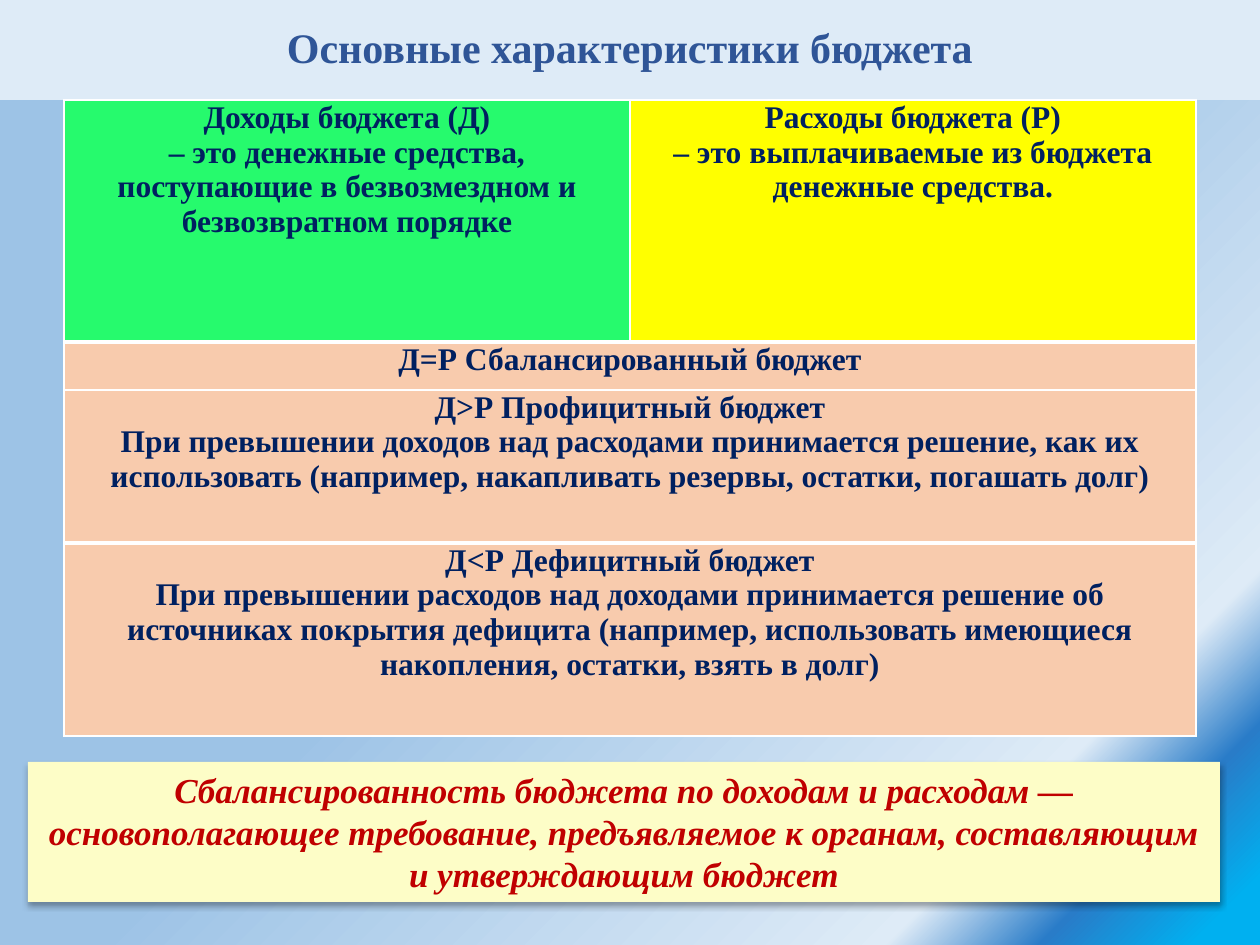
from pptx import Presentation
from pptx.dml.color import RGBColor
from pptx.enum.shapes import MSO_SHAPE
from pptx.enum.text import MSO_ANCHOR, MSO_AUTO_SIZE, PP_ALIGN
from pptx.oxml import parse_xml
from pptx.oxml.ns import nsdecls, qn
from pptx.util import Inches, Pt

TITLE = "Основные характеристики бюджета"
INCOME = ["Доходы бюджета (Д)",
          "– это денежные средства, поступающие в безвозмездном и безвозвратном порядке"]
EXPENSES = ["Расходы бюджета (Р)",
            "– это выплачиваемые из бюджета денежные средства."]
BALANCED = ["Д=Р Сбалансированный бюджет"]
SURPLUS = ["Д>Р Профицитный бюджет",
           "При превышении доходов над расходами принимается решение, как их использовать "
           "(например, накапливать резервы, остатки, погашать долг)"]
DEFICIT = ["Д<Р Дефицитный бюджет",
           "При превышении расходов над доходами принимается решение об источниках покрытия "
           "дефицита (например, использовать имеющиеся накопления, остатки, взять в долг)"]
CONCLUSION = ["Сбалансированность бюджета по доходам и расходам —",
              "основополагающее требование, предъявляемое к органам, составляющим "
              "и утверждающим бюджет"]

PEACH = "F8CBAD"
ROWS = [
    {"height": 242, "cells": [(INCOME, "26FA6D"), (EXPENSES, "FFFF00")], "top": 1, "bottom": 3},
    {"height": 48, "cells": [(BALANCED, PEACH)], "top": 3, "bottom": 1},
    {"height": 153, "cells": [(SURPLUS, PEACH)], "top": 1, "bottom": 3},
    {"height": 193, "cells": [(DEFICIT, PEACH)], "top": 3, "bottom": 1},
]
BACKGROUND = [(3, "00B0F0"), (10, "297CC8"), (17, "DEEBF7"), (53, "9DC3E6"), (96, "9DC3E6")]


def px(length):
    return int(length * Inches(1) / 126)


def color(value):
    return RGBColor.from_string(value)


def paint(shape, value):
    shape.fill.solid()
    shape.fill.fore_color.rgb = color(value)


def write(frame, lines, size, value, italic=False):
    for index, line in enumerate(lines):
        paragraph = frame.add_paragraph() if index else frame.paragraphs[0]
        paragraph.text = line
        paragraph.alignment = PP_ALIGN.CENTER
        font = paragraph.font
        font.name, font.size, font.bold, font.italic = "Times New Roman", Pt(size), True, italic
        font.color.rgb = color(value)


def set_borders(cell, top, bottom):
    properties = cell._tc.get_or_add_tcPr()
    for index, (side, width) in enumerate([("L", 1), ("R", 1), ("T", top), ("B", bottom)]):
        properties.insert(index, parse_xml(
            f'<a:ln{side} {nsdecls("a")} w="{Pt(width)}"><a:solidFill>'
            f'<a:srgbClr val="FFFFFF"/></a:solidFill></a:ln{side}>'))


def set_background(page):
    stops = "".join(f'<a:gs pos="{position * 1000}"><a:srgbClr val="{value}"/></a:gs>'
                    for position, value in BACKGROUND)
    page.background.fill.solid()
    properties = page.element.find(".//" + qn("p:bgPr"))
    properties.replace(properties[0], parse_xml(
        f'<a:gradFill {nsdecls("a")} rotWithShape="1"><a:gsLst>{stops}</a:gsLst>'
        '<a:path path="circle"><a:fillToRect l="100000" t="100000"/></a:path></a:gradFill>'))


def add_title(page):
    title = page.shapes.title
    title.left, title.top, title.width, title.height = 0, 0, px(1260), px(100)
    paint(title, "DEEBF7")
    title.text_frame.vertical_anchor = MSO_ANCHOR.MIDDLE
    write(title.text_frame, [TITLE], 24, "2F5597")
    title.text_frame.paragraphs[0].line_spacing = 0.9


def add_budget_table(page):
    height = sum(row["height"] for row in ROWS)
    table = page.shapes.add_table(len(ROWS), 2, px(64), px(100), px(1132), px(height)).table
    for index, row in enumerate(ROWS):
        table.rows[index].height = px(row["height"])
        if len(row["cells"]) == 1:
            table.cell(index, 0).merge(table.cell(index, 1))
        for column in range(2):
            set_borders(table.cell(index, column), row["top"], row["bottom"])
        for column, (lines, fill) in enumerate(row["cells"]):
            cell = table.cell(index, column)
            paint(cell, fill)
            cell.margin_left = cell.margin_right = px(9)
            cell.margin_top = cell.margin_bottom = 0
            write(cell.text_frame, lines, 18, "002060")


def add_conclusion(page):
    box = page.shapes.add_shape(MSO_SHAPE.RECTANGLE, px(28), px(762), px(1192), px(140))
    paint(box, "FDFDC7")
    box.line.fill.background()
    box.shadow.inherit = False
    box.element.spPr.find(qn("a:effectLst")).append(parse_xml(
        f'<a:outerShdw {nsdecls("a")} blurRad="{Pt(3.5)}" dist="{Pt(2.2)}" dir="5400000" '
        'rotWithShape="0"><a:srgbClr val="000000"><a:alpha val="32000"/></a:srgbClr></a:outerShdw>'))
    frame = box.text_frame
    frame.word_wrap = True
    frame.auto_size = MSO_AUTO_SIZE.SHAPE_TO_FIT_TEXT
    frame.vertical_anchor = MSO_ANCHOR.TOP
    write(frame, CONCLUSION, 20, "C00000", italic=True)


def main():
    deck = Presentation()
    deck.slide_width, deck.slide_height = px(1260), px(945)
    page = deck.slides.add_slide(deck.slide_layouts[5])
    set_background(page)
    add_title(page)
    add_budget_table(page)
    add_conclusion(page)
    deck.save("out.pptx")


if __name__ == "__main__":
    main()
